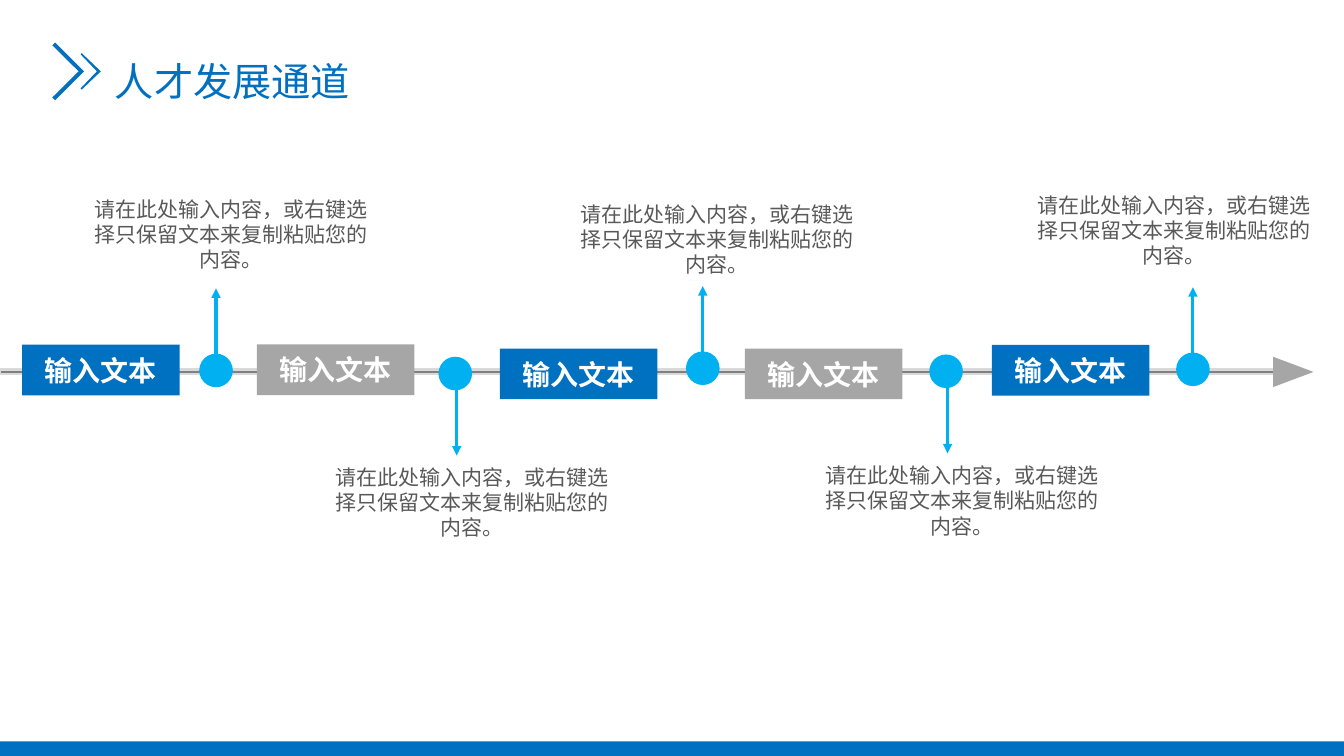
from dataclasses import dataclass

from lxml import etree
from pptx import Presentation
from pptx import util as u
from pptx.dml.color import RGBColor
from pptx.enum import shapes, text
from pptx.oxml import ns

TITLE = "人才发展通道"
LABEL = "输入文本"
CAPTION = "请在此处输入内容，或右键选择只保留文本来复制粘贴您的内容。"

# label left, label top, dot centre x, dot centre y, caption centre x, caption top
STATIONS = [
    (15.8, 246.2, 154.3, 264.6, 165.2, 136.8),
    (183.5, 246, 325.2, 266.8, 337.3, 328.3),
    (357.1, 249, 502, 263, 512.3, 140.4),
    (532.1, 249, 675.8, 265.2, 686.9, 326.9),
    (708.5, 246.4, 852.1, 263.8, 838.8, 133.9),
]

# back, shoulder, tip, inner tip, outer half height, inner half height
CHEVRONS = [
    (57.6, 58.4, 72, 69.2, 13, 12.2),
    (37.4, 39.4, 60, 56.2, 20.6, 18.6),
]
CHEVRON_AXIS = 51

PAGE_W, PAGE_H = 960, 540
LABEL_W, LABEL_H = 112.5, 36.2
CAPTION_W, CAPTION_H = 221, 62
DOT = 24
STEM_START, STEM_END = 9, 58.6
FOOTER_H = 10.4


@dataclass(frozen=True)
class Theme:
    blue: str = "0070C0"
    sky: str = "00B0F0"
    grey: str = "A6A6A6"
    axis: str = "808080"
    axis_edge: str = "D9D9D9"
    body: str = "595959"
    white: str = "FFFFFF"
    face: str = "Noto Sans CJK SC"
    title_size: float = 28
    label_size: float = 20
    caption_size: float = 15
    stem_width: float = 2.25


theme = Theme()


def rgb(value):
    return RGBColor.from_string(value)


def frame(*lengths):
    return [u.Pt(length) for length in lengths]


def paint(shape, color):
    shape.shadow.inherit = False
    shape.fill.solid()
    shape.fill.fore_color.rgb = rgb(color)
    shape.line.fill.background()
    return shape


def add_block(page, kind, box, color):
    return paint(page.shapes.add_shape(kind, *frame(*box)), color)


def write(holder, words, size, color, align, bold=False):
    para = holder.text_frame.paragraphs[0]
    para.text = words
    para.alignment = align
    font = para.font
    font.size, font.bold, font.name = u.Pt(size), bold, theme.face
    font.color.rgb = rgb(color)
    # East Asian glyphs take their typeface from a:ea, next to a:latin
    latin = para._p.find(".//" + ns.qn("a:latin"))
    east_asian = etree.Element(ns.qn("a:ea"), typeface=theme.face)
    latin.addnext(east_asian)
    return para


def add_title(page):
    title = page.shapes.title
    title.left, title.top, title.width, title.height = frame(74.9, 20.2, 184.3, 58.3)
    title.text_frame.word_wrap = False
    title.text_frame.vertical_anchor = text.MSO_ANCHOR.TOP
    para = write(title, TITLE, theme.title_size, theme.blue, text.PP_ALIGN.LEFT)
    para.line_spacing = 1.5


def add_chevrons(page):
    outline = None
    for back, shoulder, tip, inner_tip, outer, inner in CHEVRONS:
        corners = [(shoulder, -outer), (tip, 0), (shoulder, outer),
                   (back, inner), (inner_tip, 0), (back, -inner)]
        points = [frame(x, CHEVRON_AXIS + dy) for x, dy in corners]
        if outline is None:
            outline = page.shapes.build_freeform(*points[0], scale=1.0)
        else:
            outline.move_to(*points[0])
        outline.add_line_segments(points[1:], close=True)
    paint(outline.convert_to_shape(), theme.blue)


def add_axis(page):
    bar = add_block(page, shapes.MSO_SHAPE.RECTANGLE, (0, 263.8, 913, 3.4), theme.axis)
    bar.line.color.rgb = rgb(theme.axis_edge)
    bar.line.width = u.Pt(2)
    head = add_block(page, shapes.MSO_SHAPE.ISOSCELES_TRIANGLE,
                     (913, 251.3, 21.6, 28.8), theme.grey)
    head.rotation = 90


def add_stem(page, x, start, end):
    stem = page.shapes.add_connector(shapes.MSO_CONNECTOR.STRAIGHT,
                                     *frame(x, start, x, end))
    stem.line.color.rgb = rgb(theme.sky)
    stem.line.width = u.Pt(theme.stem_width)
    etree.SubElement(stem.line._get_or_add_ln(), ns.qn("a:tailEnd"), type="triangle")
    etree.SubElement(stem._element.spPr, ns.qn("a:effectLst"))


def add_station(page, index, station):
    """Add a label, a dot with its arrow, and a caption: even ones above, odd ones below."""
    label_x, label_y, dot_x, dot_y, caption_x, caption_y = station
    below = index % 2 == 1
    direction = 1 if below else -1

    caption = page.shapes.add_textbox(
        *frame(caption_x - CAPTION_W / 2, caption_y, CAPTION_W, CAPTION_H))
    caption.text_frame.word_wrap = True
    write(caption, CAPTION, theme.caption_size, theme.body, text.PP_ALIGN.CENTER)

    label = add_block(page, shapes.MSO_SHAPE.RECTANGLE,
                      (label_x, label_y, LABEL_W, LABEL_H),
                      theme.grey if below else theme.blue)
    label.text_frame.vertical_anchor = text.MSO_ANCHOR.MIDDLE
    write(label, LABEL, theme.label_size, theme.white, text.PP_ALIGN.CENTER, bold=True)

    add_block(page, shapes.MSO_SHAPE.OVAL,
              (dot_x - DOT / 2, dot_y - DOT / 2, DOT, DOT), theme.sky)
    add_stem(page, dot_x + (1 if below else 0),
             dot_y + direction * STEM_START, dot_y + direction * STEM_END)


def main():
    deck = Presentation()
    deck.slide_width, deck.slide_height = frame(PAGE_W, PAGE_H)
    page = deck.slides.add_slide(deck.slide_layouts[5])
    add_chevrons(page)
    add_block(page, shapes.MSO_SHAPE.RECTANGLE,
              (0, PAGE_H - FOOTER_H, PAGE_W, FOOTER_H), theme.blue)
    add_title(page)
    add_axis(page)
    for index, station in enumerate(STATIONS):
        add_station(page, index, station)
    deck.save("out.pptx")


if __name__ == "__main__":
    main()
